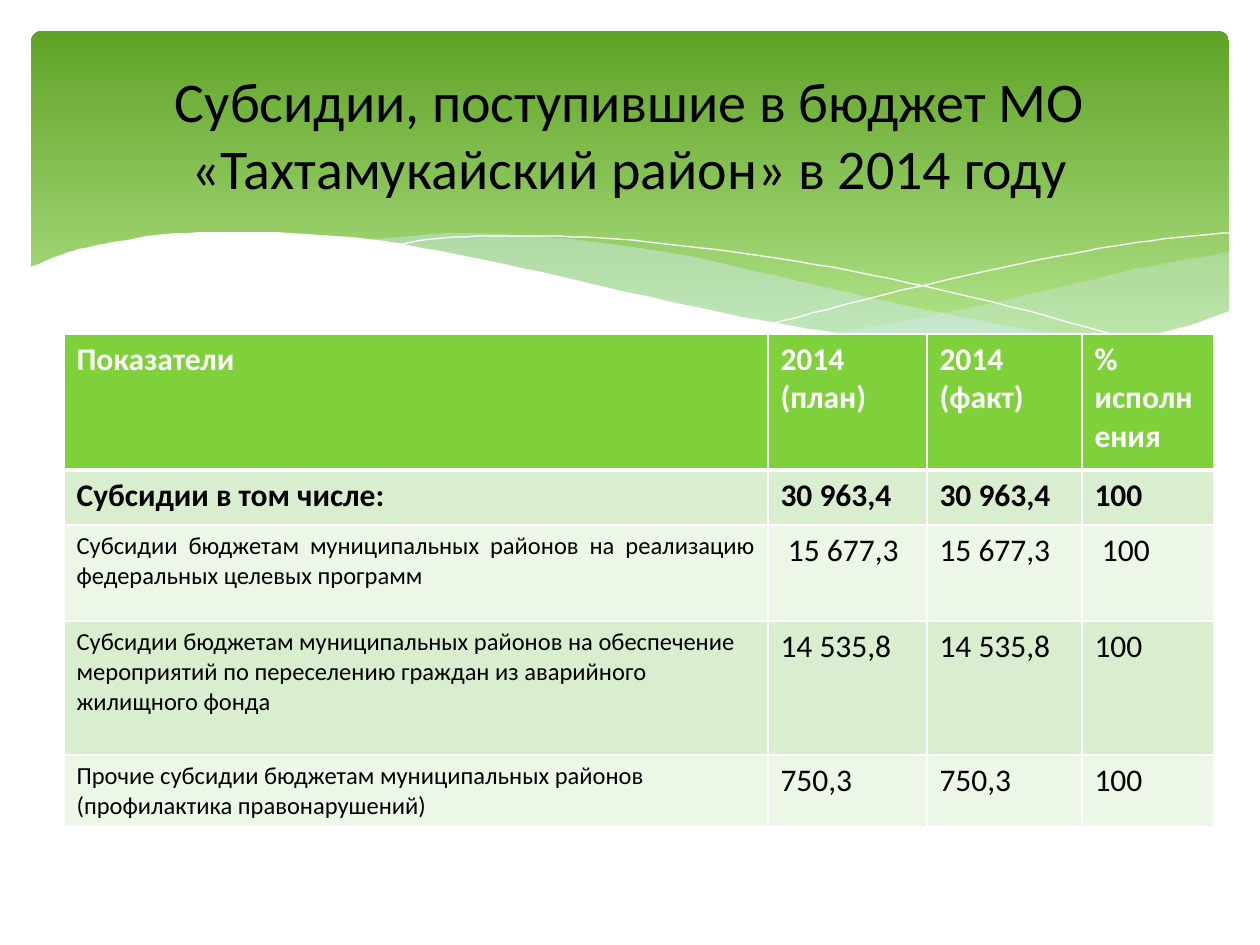
from itertools import product

from lxml import etree
from pptx import Presentation
from pptx import util as u
from pptx.dml.color import RGBColor
from pptx.enum import shapes, text
from pptx.oxml import ns

SCALE = 914400 / 126  # EMU in one px
FONT = "Calibri"
COLORS = {
    "banner_top": "5FA326", "banner_bottom": "B2E389", "wave": "D6ECFF",
    "white": "FFFFFF", "black": "000000",
    "header": "7FD13B", "band_dark": "D8EECE", "band_light": "ECF7E8",
}

# Wave outlines, in px from the banner's top left corner
RIGHT_WAVE = [
    [(1199, 221), (1147, 230), (1092, 241), (1017, 259), (918, 281), (802, 303)],
    [(802, 303), (875, 312), (953, 318), (1021, 318), (1079, 313), (1129, 303),
     (1165, 293), (1199, 280)],
]
MIDDLE_WAVE = [
    [(329, 210), (382, 205), (424, 202), (472, 203), (526, 207), (602, 216),
     (668, 227), (762, 249), (859, 271), (946, 289), (1024, 303), (1094, 313)],
    [(1094, 313), (1049, 318), (986, 319), (911, 317), (845, 309), (768, 298),
     (682, 281), (588, 261), (507, 241), (425, 225), (376, 216), (329, 210)],
]
FALLING_LINE = [
    [(358, 215), (402, 208), (457, 205), (515, 205), (585, 208), (670, 217),
     (770, 231), (845, 245), (927, 263), (1016, 285), (1112, 312)],
]
RISING_LINE = [
    [(741, 293), (816, 273), (911, 250), (1022, 226), (1097, 213), (1151, 206),
     (1198, 202)],
]
WHITE_WAVE = [
    [(1200, 279), (1166, 292), (1116, 305), (1056, 314), (988, 318), (906, 314),
     (811, 303), (729, 289), (636, 270), (532, 246), (429, 224), (337, 208),
     (259, 202), (192, 201), (135, 203), (89, 210), (53, 217), (27, 225), (-2, 237)],
    [(-2, 384), (1200, 384)],
]

COLUMN_WIDTHS = [704, 159, 155, 132]
ROW_HEIGHTS = [136, 55, 96, 134, 55]
SUBSIDIES = [
    ["Показатели", "2014 (план)", "2014 (факт)", "% исполнения"],
    ["Субсидии в том числе:", "30 963,4", "30 963,4", "100"],
    ["Субсидии бюджетам муниципальных районов на реализацию федеральных целевых программ",
     "15 677,3", "15 677,3", "100"],
    ["Субсидии бюджетам муниципальных районов на обеспечение мероприятий по переселению "
     "граждан из аварийного жилищного фонда", "14 535,8", "14 535,8", "100"],
    ["Прочие субсидии бюджетам муниципальных районов (профилактика правонарушений)",
     "750,3", "750,3", "100"],
]
INDENTED_CELLS = {(2, 1), (2, 3)}


def px(length):
    return u.Emu(round(length * SCALE))


def color(name):
    return RGBColor.from_string(COLORS[name])


def style_font(paragraph, size, color_name, bold=False):
    for run in paragraph.runs:
        run.font.name = FONT
        run.font.size = u.Pt(size)
        run.font.bold = bold
        run.font.color.rgb = color(color_name)


def smooth(knots, steps=5):
    """Points of a Catmull-Rom curve through the knots."""
    padded = [knots[0], *knots, knots[-1]]
    points = [knots[0]]
    for a, b, c, d in zip(padded, padded[1:], padded[2:], padded[3:]):
        for t in (step / steps for step in range(1, steps + 1)):
            points.append(tuple(
                (2 * q + (r - p) * t + (2 * p - 5 * q + 4 * r - s) * t ** 2
                 + (3 * q - p - 3 * r + s) * t ** 3) / 2
                for p, q, r, s in zip(a, b, c, d)))
    return points


def add_curve(slide, left, top, curves, fill=None, opacity=100):
    """A filled wave, or a hairline when no fill is given."""
    points = [point for knots in curves for point in smooth(knots)]
    builder = slide.shapes.build_freeform(*points[0], scale=SCALE)
    builder.add_line_segments(points[1:], close=fill is not None)
    curve = builder.convert_to_shape(px(left), px(top))
    curve.shadow.inherit = False
    if fill is None:
        curve.fill.background()
        curve.line.color.rgb = color("white")
        curve.line.width = u.Pt(0)
        return
    curve.fill.solid()
    curve.fill.fore_color.rgb = color(fill)
    curve.line.fill.background()
    if opacity < 100:
        tint = curve.fill._xPr.find(".//" + ns.qn("a:srgbClr"))
        etree.SubElement(tint, ns.qn("a:alpha"), val=str(opacity * 1000))


def add_banner(slide, left, top, width, height):
    # Green gradient panel
    panel = slide.shapes.add_shape(shapes.MSO_SHAPE.ROUNDED_RECTANGLE,
                                   px(left), px(top), px(width), px(height))
    panel.adjustments[0] = 0.03
    panel.shadow.inherit = False
    panel.line.fill.background()
    panel.fill.gradient()
    panel.fill.gradient_angle = 270
    stops = zip(panel.fill.gradient_stops, ("banner_top", "banner_bottom"), (0, 0.9))
    for stop, name, position in stops:
        stop.color.rgb = color(name)
        stop.position = position

    # Waves along its lower edge
    add_curve(slide, left, top, RIGHT_WAVE, "wave", 29)
    add_curve(slide, left, top, MIDDLE_WAVE, "wave", 40)
    add_curve(slide, left, top, FALLING_LINE)
    add_curve(slide, left, top, RISING_LINE)
    add_curve(slide, left, top, WHITE_WAVE, "white")


def add_borders(cell, bottom, top):
    properties = cell._tc.get_or_add_tcPr()
    for side, points in (("L", 1), ("R", 1), ("T", top), ("B", bottom)):
        border = etree.SubElement(properties, ns.qn(f"a:ln{side}"), w=str(u.Pt(points)))
        fill = etree.SubElement(border, ns.qn("a:solidFill"))
        etree.SubElement(fill, ns.qn("a:srgbClr"), val=COLORS["white"])


def add_subsidies_table(slide, left, top):
    table = slide.shapes.add_table(
        len(ROW_HEIGHTS), len(COLUMN_WIDTHS), px(left), px(top),
        px(sum(COLUMN_WIDTHS)), px(sum(ROW_HEIGHTS))).table
    for column, width in zip(table.columns, COLUMN_WIDTHS):
        column.width = px(width)
    for row, height in zip(table.rows, ROW_HEIGHTS):
        row.height = px(height)

    for r, c in product(range(len(ROW_HEIGHTS)), range(len(COLUMN_WIDTHS))):
        cell = table.cell(r, c)
        add_borders(cell, bottom=3 if r == 0 else 1, top=3 if r == 1 else 1)
        cell.fill.solid()
        band = "header" if r == 0 else "band_dark" if r % 2 else "band_light"
        cell.fill.fore_color.rgb = color(band)
        if (r, c) in INDENTED_CELLS:
            cell.margin_left = px(20)
        cell.text_frame.text = SUBSIDIES[r][c]
        paragraph = cell.text_frame.paragraphs[0]
        style_font(paragraph, 14 if r > 1 and c == 0 else 18,
                   "white" if r == 0 else "black", bold=r < 2)
        if (r, c) == (2, 0):
            paragraph.alignment = text.PP_ALIGN.JUSTIFY


def add_title(slide, left, top, width, height):
    title = slide.shapes.add_textbox(px(left), px(top), px(width), px(height))
    frame = title.text_frame
    frame.word_wrap = True
    frame.vertical_anchor = text.MSO_ANCHOR.MIDDLE
    frame.text = "Субсидии, поступившие в бюджет МО «Тахтамукайский район» в 2014 году"
    frame.paragraphs[0].alignment = text.PP_ALIGN.CENTER
    style_font(frame.paragraphs[0], 32, "black")


def main():
    deck = Presentation()
    deck.slide_width, deck.slide_height = px(1260), px(945)
    slide = deck.slides.add_slide(deck.slide_layouts[6])
    add_banner(slide, 31, 31, 1198, 340)
    add_subsidies_table(slide, 64, 334)
    add_title(slide, 63, 47, 1134, 173)
    deck.save("out.pptx")


if __name__ == "__main__":
    main()
